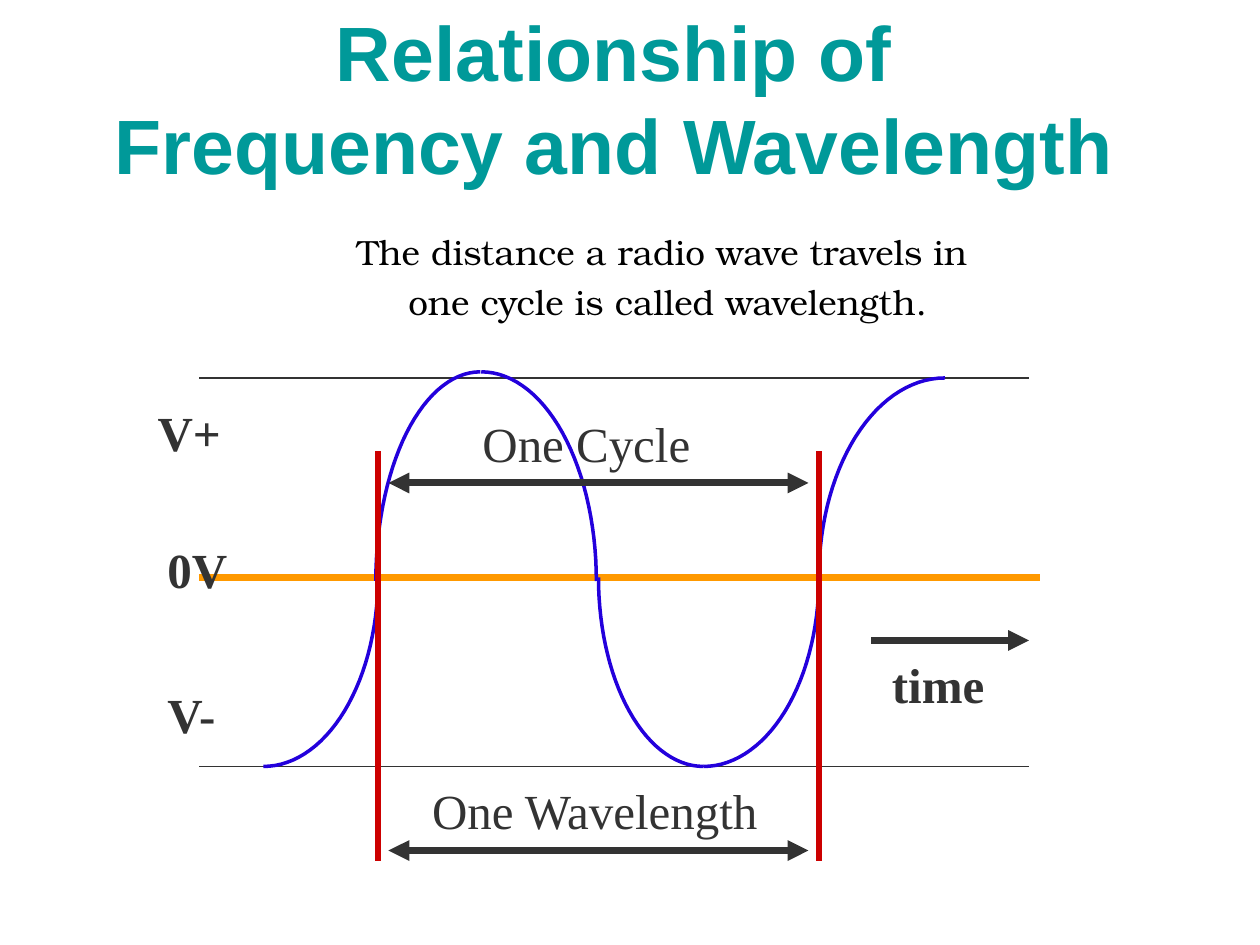
from dataclasses import dataclass
from math import cos, pi, sin

from pptx import Presentation
from pptx.dml.color import RGBColor
from pptx.enum import shapes, text
from pptx.oxml import ns, xmlchemy
from pptx.util import Pt


@dataclass(frozen=True)
class Theme:
    title: str = "009999"
    body: str = "000000"
    ink: str = "333333"
    axis: str = "FF9900"
    wave: str = "2300DC"
    marker: str = "CC0000"
    title_font: str = "Arial"
    body_font: str = "TeX Gyre Bonum"
    label_font: str = "Times New Roman"
    title_size: float = 44
    body_size: float = 20
    label_size: float = 28
    thin: float = 1
    medium: float = 2
    thick: float = 4


T = Theme()


def write(sp, lines, *, font, size, color, bold=False, align=text.PP_ALIGN.LEFT,
          anchor=text.MSO_ANCHOR.TOP, wrap=True, before=0, spacing=1.0):
    tf = sp.text_frame
    tf.word_wrap = wrap
    tf.auto_size = text.MSO_AUTO_SIZE.NONE
    tf.vertical_anchor = anchor
    for i, line in enumerate(lines):
        p = tf.add_paragraph() if i else tf.paragraphs[0]
        p.text = line
        p.alignment = align
        p.space_before = Pt(before)
        p.line_spacing = spacing
        for r in p.runs:
            r.font.name = font
            r.font.size = Pt(size)
            r.font.bold = bold
            r.font.color.rgb = RGBColor.from_string(color)


def add_line(s, x1, y1, x2, y2, color, width, arrows=()):
    c = s.shapes.add_connector(shapes.MSO_CONNECTOR.STRAIGHT,
                               Pt(x1), Pt(y1), Pt(x2), Pt(y2))
    c.line.color.rgb = RGBColor.from_string(color)
    c.line.width = Pt(width)
    ln = c.line._get_or_add_ln()
    for end in arrows:
        tip = xmlchemy.OxmlElement(f"a:{end}")
        tip.set("type", "triangle")
        ln.append(tip)
    c._element.find(ns.qn("p:spPr")).append(xmlchemy.OxmlElement("a:effectLst"))


def add_quarter(s, crest, zero, steps=30):
    (cx, cy), (zx, zy) = crest, zero
    angles = [pi / 2 * i / steps for i in range(steps + 1)]
    points = [(Pt(cx + (zx - cx) * sin(a)), Pt(zy + (cy - zy) * cos(a)))
              for a in angles]
    fb = s.shapes.build_freeform(*points[0])
    fb.add_line_segments(points[1:], close=False)
    sp = fb.convert_to_shape()
    sp.shadow.inherit = False
    sp.fill.background()
    sp.line.color.rgb = RGBColor.from_string(T.wave)
    sp.line.width = Pt(T.medium)


def add_title(s, x, y, w, h):
    sp = s.shapes.title
    sp.left, sp.top, sp.width, sp.height = Pt(x), Pt(y), Pt(w), Pt(h)
    write(sp, ["Relationship of\vFrequency and Wavelength"], font=T.title_font,
          size=T.title_size, color=T.title, bold=True,
          align=text.PP_ALIGN.CENTER, anchor=text.MSO_ANCHOR.MIDDLE)


def add_definition(s, x, y, w, h):
    sp = s.shapes.add_textbox(Pt(x), Pt(y), Pt(w), Pt(h))
    write(sp, ["The distance a radio wave travels in ",
               "one cycle is called wavelength."], font=T.body_font,
          size=T.body_size, color=T.body, align=text.PP_ALIGN.CENTER, before=5)


def add_wave_diagram(s, x, y, w, h):
    mid = y + 114
    add_line(s, x, mid, x + w, mid, T.axis, T.thick)
    for level in (y, y + h):
        add_line(s, x, level, x + w - 6, level, T.ink, T.thin)

    quarters = [
        ((36.5, h), (102, 114)),
        ((160.5, -3.5), (100.8, 116)),
        ((161, -3.5), (226.8, 116)),
        ((288, h), (228, 114)),
        ((288, h), (354, 114)),
        ((426, 0), (354, 114)),
    ]
    for (cx, cy), (zx, zy) in quarters:
        add_quarter(s, (x + cx, y + cy), (x + zx, y + zy))

    start, end = x + 102, x + 354
    for bar in (start, end):
        add_line(s, bar, y + 42, bar, y + 276, T.marker, T.thick)
    for level in (y + 60, y + 270):
        add_line(s, start + 6, level, end - 6, level, T.ink, T.thick,
                 ("headEnd", "tailEnd"))
    add_line(s, x + 384, y + 150, x + 474, y + 150, T.ink, T.thick, ("tailEnd",))

    labels = [
        ("V+", -31, 13, 50, True),
        ("0V", -25.4, 91.4, 49, True),
        ("V-", -25.4, 174.2, 44, True),
        ("time", 388.6, 157, 68, True),
        ("One Cycle", 154.6, 19.4, 133, False),
        ("One Wavelength", 125.8, 229, 200, False),
    ]
    for label, dx, dy, lw, bold in labels:
        sp = s.shapes.add_textbox(Pt(x + dx), Pt(y + dy), Pt(lw), Pt(40))
        write(sp, [label], font=T.label_font, size=T.label_size, color=T.ink,
              bold=bold, wrap=False, spacing=0.95)


def main():
    prs = Presentation()
    prs.slide_width, prs.slide_height = Pt(720), Pt(540)
    s = prs.slides.add_slide(prs.slide_layouts[5])
    add_title(s, 18, -1.5, 666, 114)
    add_definition(s, 75.6, 128, 612, 89)
    add_wave_diagram(s, 114, 216, 480, 222)
    prs.save("out.pptx")


if __name__ == "__main__":
    main()
